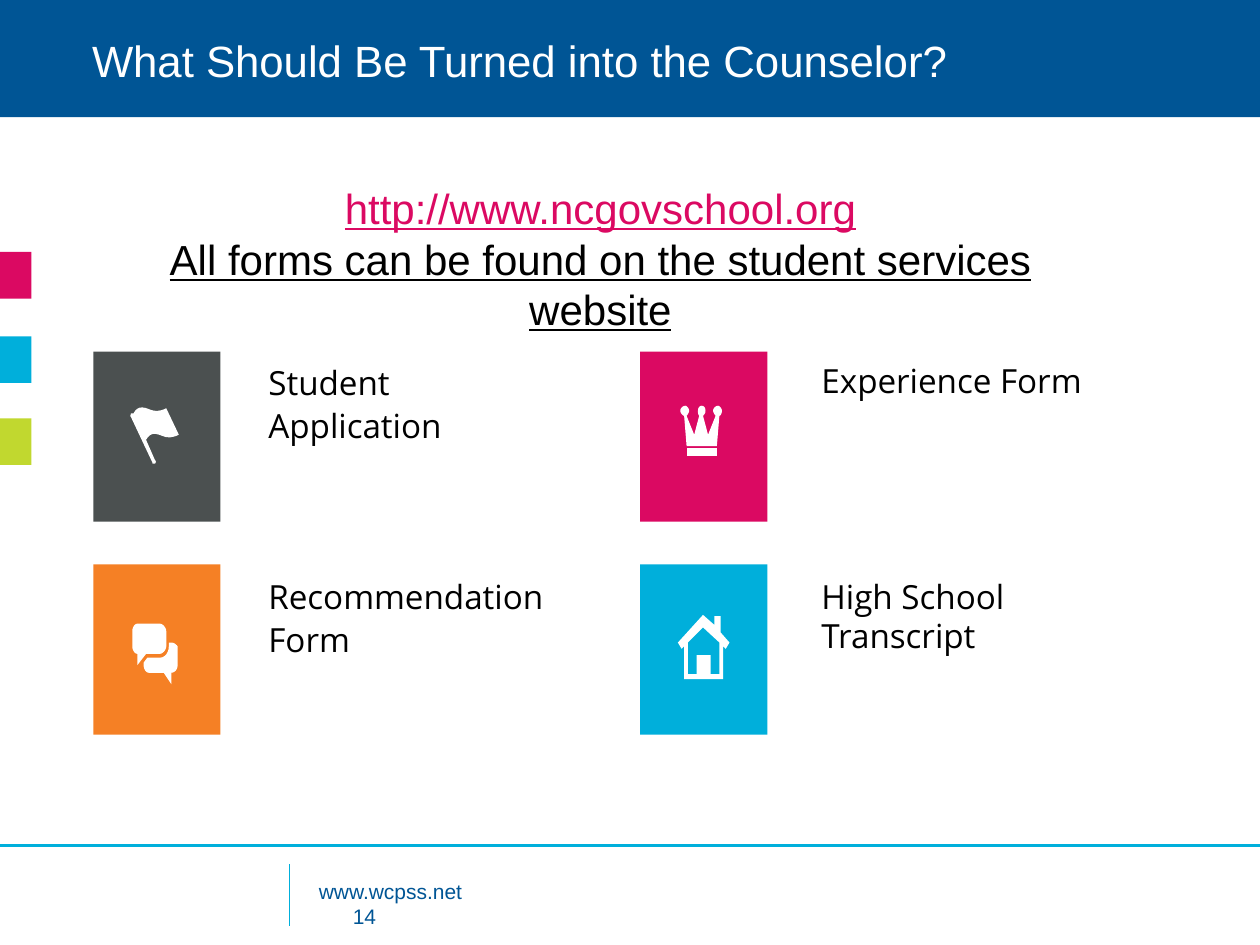
import pptx
import pptx.util
import pptx.dml.color
import pptx.enum.shapes
import pptx.enum.text
import lxml.etree

Inches = pptx.util.Inches
RGBColor = pptx.dml.color.RGBColor

NAVY = RGBColor(0x00, 0x55, 0x95)
SKY = RGBColor(0x00, 0xAF, 0xDB)
PINK = RGBColor(0xDB, 0x09, 0x62)
LIME = RGBColor(0xC1, 0xD8, 0x2F)
GRAY = RGBColor(0x4B, 0x50, 0x50)
ORANGE = RGBColor(0xF5, 0x80, 0x25)
WHITE = RGBColor(0xFF, 0xFF, 0xFF)
BLACK = RGBColor(0x00, 0x00, 0x00)

# Icon outlines in inches: a pair is a corner, six numbers are a Bezier curve.
FLAG = [[
    (1.32, 3.24), (1.32, 3.24, 1.25, 3.28, 1.19, 3.25),
    (1.12, 3.22, 1.09, 3.23, 1.06, 3.28), (1.05, 3.28, 1.05, 3.28, 1.04, 3.28),
    (1.04, 3.29, 1.03, 3.3, 1.04, 3.31), (1.21, 3.67),
    (1.21, 3.68, 1.21, 3.68, 1.22, 3.68), (1.23, 3.68),
    (1.24, 3.67, 1.24, 3.66, 1.23, 3.65), (1.16, 3.49),
    (1.19, 3.44, 1.22, 3.43, 1.29, 3.46), (1.35, 3.49, 1.42, 3.45, 1.42, 3.45),
]]
CROWN_BAND = [[(5.45, 3.56), (5.69, 3.56), (5.69, 3.62), (5.45, 3.62)]]
CROWN = [[
    (5.73, 3.26), (5.73, 3.24, 5.71, 3.22, 5.7, 3.22),
    (5.68, 3.22, 5.66, 3.24, 5.66, 3.26), (5.66, 3.27, 5.67, 3.29, 5.68, 3.3),
    (5.62, 3.45), (5.58, 3.3), (5.59, 3.29, 5.6, 3.28, 5.6, 3.26),
    (5.6, 3.24, 5.59, 3.22, 5.57, 3.22), (5.55, 3.22, 5.54, 3.24, 5.54, 3.26),
    (5.54, 3.28, 5.54, 3.29, 5.55, 3.3), (5.51, 3.45), (5.45, 3.3),
    (5.46, 3.29, 5.47, 3.27, 5.47, 3.26), (5.47, 3.24, 5.45, 3.22, 5.44, 3.22),
    (5.42, 3.22, 5.4, 3.24, 5.4, 3.26), (5.4, 3.28, 5.42, 3.3, 5.43, 3.3),
    (5.45, 3.54), (5.69, 3.54), (5.71, 3.3), (5.72, 3.3, 5.73, 3.28, 5.73, 3.26),
]]
FRONT_BUBBLE = [[
    (1.36, 5.1), (1.34, 5.1), (1.34, 5.13), (1.34, 5.18, 1.31, 5.22, 1.27, 5.22),
    (1.17, 5.22), (1.14, 5.26), (1.14, 5.28), (1.14, 5.31, 1.16, 5.34, 1.18, 5.34),
    (1.3, 5.34), (1.36, 5.43), (1.36, 5.34), (1.39, 5.34, 1.41, 5.31, 1.41, 5.28),
    (1.41, 5.13), (1.41, 5.13, 1.39, 5.1, 1.36, 5.1),
]]
BACK_BUBBLE = [[
    (1.16, 5.19), (1.27, 5.19), (1.29, 5.19, 1.32, 5.16, 1.32, 5.13),
    (1.32, 5.01), (1.32, 4.98, 1.29, 4.95, 1.27, 4.95), (1.09, 4.95),
    (1.07, 4.95, 1.05, 4.98, 1.05, 5.01), (1.05, 5.13),
    (1.05, 5.16, 1.07, 5.19, 1.09, 5.19), (1.09, 5.28),
]]
HOUSE = [
    [(5.72, 5.02), (5.72, 4.89), (5.67, 4.89), (5.67, 4.96), (5.58, 4.88),
     (5.38, 5.1), (5.41, 5.15), (5.43, 5.13), (5.43, 5.39), (5.74, 5.39),
     (5.74, 5.13), (5.76, 5.15), (5.79, 5.1)],
    [(5.71, 5.35), (5.64, 5.35), (5.64, 5.2), (5.53, 5.2), (5.53, 5.35),
     (5.46, 5.35), (5.46, 5.1), (5.58, 4.98), (5.71, 5.1)],
]
ICONS = [FLAG, CROWN_BAND, CROWN, FRONT_BUBBLE, BACK_BUBBLE, HOUSE]


def paint(shape, color):
    shape.shadow.inherit = False
    shape.fill.solid()
    shape.fill.fore_color.rgb = color
    shape.line.fill.background()


def add_block(slide, left, top, width, height, color):
    block = slide.shapes.add_shape(
        pptx.enum.shapes.MSO_SHAPE.RECTANGLE,
        Inches(left), Inches(top), Inches(width), Inches(height))
    paint(block, color)


def add_rule(slide, x1, y1, x2, y2, weight):
    rule = slide.shapes.add_connector(
        pptx.enum.shapes.MSO_CONNECTOR.STRAIGHT,
        Inches(x1), Inches(y1), Inches(x2), Inches(y2))
    rule.line.color.rgb = SKY
    rule.line.width = pptx.util.Pt(weight)
    lxml.etree.SubElement(rule._element.spPr, pptx.oxml.ns.qn("a:effectLst"))


def trace(outline, steps=6):
    """Turn corners and Bezier curves into a list of points in EMU."""
    points = []
    for part in outline:
        if len(part) == 2:
            points.append(part)
            continue
        start = points[-1]
        controls = [start, part[:2], part[2:4], part[4:]]
        for step in range(1, steps + 1):
            t = step / steps
            weights = [(1 - t) ** 3, 3 * t * (1 - t) ** 2, 3 * t * t * (1 - t), t ** 3]
            points.append(tuple(
                sum(w * point[axis] for w, point in zip(weights, controls))
                for axis in (0, 1)))
    return [(Inches(x), Inches(y)) for x, y in points]


def add_icon(slide, outlines):
    first, *holes = [trace(outline) for outline in outlines]
    builder = slide.shapes.build_freeform(*first[0])
    builder.add_line_segments(first[1:], close=True)
    for hole in holes:
        builder.move_to(*hole[0])
        builder.add_line_segments(hole[1:], close=True)
    paint(builder.convert_to_shape(), WHITE)


def set_margins(frame, side, end):
    frame.word_wrap = True
    frame.margin_left = frame.margin_right = Inches(side)
    frame.margin_top = frame.margin_bottom = Inches(end)


def add_text(para, text, size, color, font="Arial", underline=None):
    span = para.add_run()
    span.text = text
    span.font.size = pptx.util.Pt(size)
    span.font.name = font
    span.font.color.rgb = color
    span.font.underline = underline


def add_box(slide, left, top, width, height, side=0.04, end=0.02):
    box = slide.shapes.add_textbox(
        Inches(left), Inches(top), Inches(width), Inches(height))
    set_margins(box.text_frame, side, end)
    return box.text_frame


def add_title(slide, text):
    title = slide.shapes.title
    title.left, title.top = Inches(0.69), Inches(0.1)
    title.width, title.height = Inches(8.62), Inches(0.8)
    frame = title.text_frame
    set_margins(frame, 0.04, 0.02)
    frame.vertical_anchor = pptx.enum.text.MSO_ANCHOR.MIDDLE
    para = frame.paragraphs[0]
    para.alignment = pptx.enum.text.PP_ALIGN.LEFT
    para.line_spacing = 0.9
    add_text(para, text, 25, WHITE)


def add_intro(slide):
    frame = add_box(slide, 0.74, 1.35, 8.05, 1.41, 0.1, 0.1)
    lines = [("http://www.ncgovschool.org", PINK),
             ("All forms can be found on the student services website", BLACK)]
    for index, (text, color) in enumerate(lines):
        para = frame.add_paragraph() if index else frame.paragraphs[0]
        para.alignment = pptx.enum.text.PP_ALIGN.CENTER
        add_text(para, text, 24, color, underline=True)


def add_footer(slide):
    add_rule(slide, 0, 6.71, 10, 6.71, 2)
    add_rule(slide, 2.3, 6.86, 2.3, 7.35, 0.75)
    frame = add_box(slide, 2.49, 6.95, 6.83, 0.45)
    add_text(frame.paragraphs[0], "www.wcpss.net", 12, NAVY)
    number = frame.add_paragraph()
    number._p.get_or_add_pPr().set("marL", str(Inches(0.27)))
    add_text(number, "14", 12, NAVY)


def main():
    deck = pptx.Presentation()
    deck.slide_width, deck.slide_height = Inches(10), Inches(7.5)
    slide = deck.slides.add_slide(deck.slide_layouts[5])
    title = slide.shapes.title._element
    add_block(slide, 0, 0, 10, 0.93, NAVY)
    slide.shapes._spTree.append(title)
    add_title(slide, "What Should Be Turned into the Counselor?")
    for top, color in [(2, PINK), (2.67, SKY), (3.32, LIME)]:
        add_block(slide, 0, top, 0.25, 0.37, color)
    add_footer(slide)
    cards = [
        (0.74, 2.79, GRAY, "Student Application", 2.09, 2.83, 2.2, 0.77, 1.08),
        (0.74, 4.48, ORANGE, "Recommendation Form", 2.09, 4.53, 2.43, 0.77, 1.08),
        (5.08, 2.79, PINK, "Experience Form", 6.48, 2.84, 2.2, 0.36, 1),
        (5.08, 4.48, SKY, "High School Transcript", 6.48, 4.55, 2.2, 0.71, 1),
    ]
    for left, top, color, label, *place, spacing in cards:
        add_block(slide, left, top, 1.01, 1.35, color)
        para = add_box(slide, *place).paragraphs[0]
        para.line_spacing = float(spacing)
        add_text(para, label, 19, BLACK, "Open Sans")
    for icon in ICONS:
        add_icon(slide, icon)
    add_intro(slide)
    deck.save("out.pptx")


if __name__ == "__main__":
    main()
